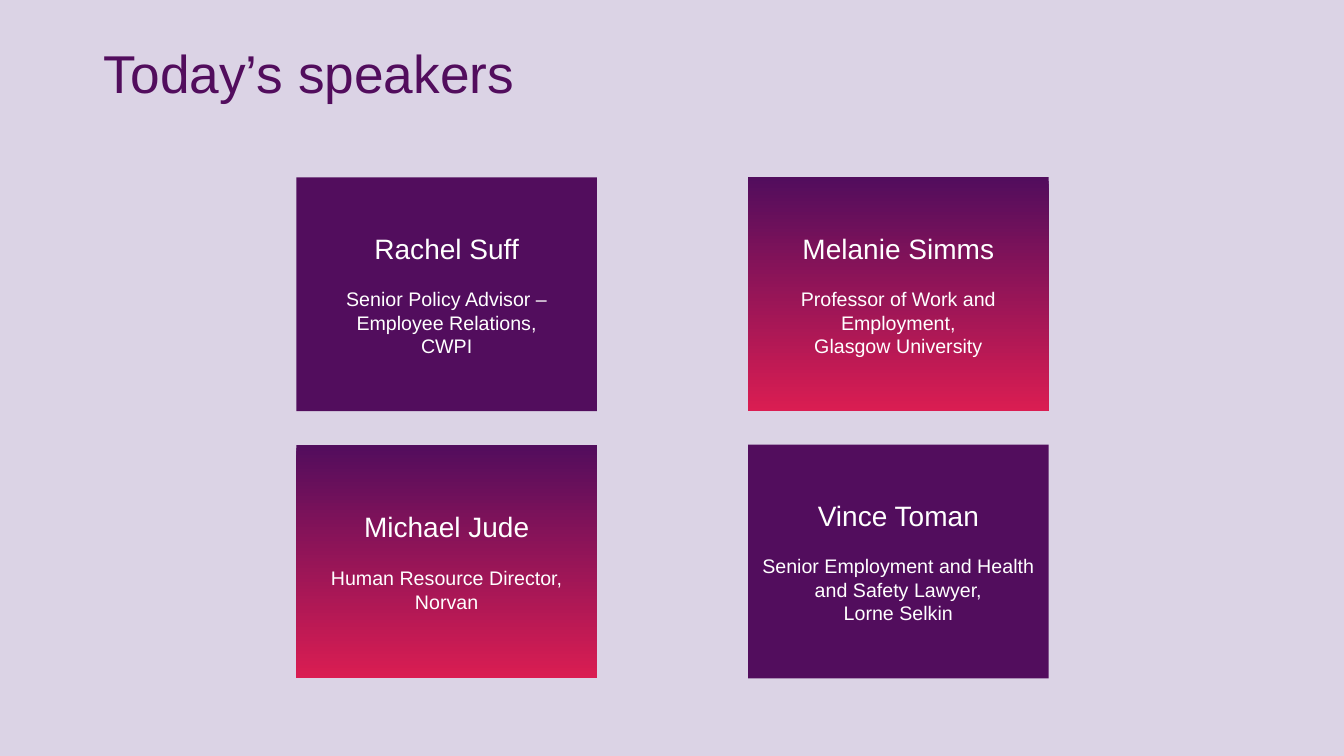
from dataclasses import dataclass
from typing import Any

from pptx import Presentation
from pptx.dml.color import RGBColor
from pptx.enum.shapes import MSO_SHAPE as Shape
from pptx.enum.text import MSO_ANCHOR as Anchor, MSO_AUTO_SIZE as AutoSize, PP_ALIGN as Align
from pptx.util import Inches, Pt

COLOURS = {"background": "DBD3E5", "purple": "520D5D", "red": "DA1D52", "white": "FFFFFF"}
FONT = "Arial"
CARD_LEFT, CARD_TOP = 2.94, 1.76
CARD_WIDTH, CARD_HEIGHT = 2.98, 2.32
COLUMN_STEP, ROW_STEP = 4.48, 2.65
COLUMNS = 2


@dataclass(frozen=True)
class Speaker:
    name: str
    role: str
    organisation: str


SPEAKERS = [
    Speaker("Rachel Suff", "Senior Policy Advisor – Employee Relations,", "CWPI"),
    Speaker("Melanie Simms", "Professor of Work and Employment,", "Glasgow University"),
    Speaker("Michael Jude", "Human Resource Director,", "Norvan"),
    Speaker("Vince Toman", "Senior Employment and Health and Safety Lawyer,", "Lorne Selkin"),
]


def colour(name: str) -> RGBColor:
    return RGBColor.from_string(COLOURS[name])


def apply_format(target: Any, values: dict[str, Any]) -> None:
    for attribute, value in values.items():
        setattr(target, attribute, value)


def write_paragraph(paragraph: Any, text: str, size: float, colour_name: str,
                    **layout: Any) -> None:
    paragraph.text = text
    apply_format(paragraph, layout)
    apply_format(paragraph.font, {"name": FONT, "size": Pt(size), "bold": False})
    paragraph.font.color.rgb = colour(colour_name)


def fill_card(shape: Any, has_gradient: bool) -> None:
    if not has_gradient:
        shape.fill.solid()
        shape.fill.fore_color.rgb = colour("purple")
        return
    shape.fill.gradient()
    shape.fill.gradient_angle = 270
    for stop, position, name in zip(shape.fill.gradient_stops, (0, 1), ("purple", "red")):
        stop.position = position
        stop.color.rgb = colour(name)


def add_card(slide: Any, speaker: Speaker, row: int, column: int) -> None:
    shape = slide.shapes.add_shape(
        Shape.RECTANGLE,
        Inches(CARD_LEFT + column * COLUMN_STEP), Inches(CARD_TOP + row * ROW_STEP),
        Inches(CARD_WIDTH), Inches(CARD_HEIGHT),
    )
    shape.shadow.inherit = False
    shape.line.fill.background()
    fill_card(shape, has_gradient=row != column)
    frame = shape.text_frame
    apply_format(frame, {"word_wrap": True, "vertical_anchor": Anchor.MIDDLE})
    write_paragraph(frame.paragraphs[0], speaker.name, 20, "white", alignment=Align.CENTER)
    write_paragraph(frame.add_paragraph(), speaker.role, 14, "white",
                    alignment=Align.CENTER, space_before=Pt(16))
    write_paragraph(frame.add_paragraph(), speaker.organisation, 14, "white",
                    alignment=Align.CENTER)


def add_title(slide: Any, text: str) -> None:
    title = slide.shapes.title
    apply_format(title, {"left": Inches(0.93), "top": Inches(0.42),
                         "width": Inches(8.62), "height": Inches(1.35)})
    apply_format(title.text_frame, {"word_wrap": True, "vertical_anchor": Anchor.TOP,
                                    "auto_size": AutoSize.NONE})
    write_paragraph(title.text_frame.paragraphs[0], text, 38, "purple",
                    alignment=Align.LEFT, line_spacing=0.9, space_before=Pt(0))


def main() -> None:
    presentation = Presentation()
    apply_format(presentation, {"slide_width": Inches(13.33), "slide_height": Inches(7.5)})
    slide = presentation.slides.add_slide(presentation.slide_layouts.get_by_name("Title Only"))
    slide.background.fill.solid()
    slide.background.fill.fore_color.rgb = colour("background")
    add_title(slide, "Today’s speakers")
    for index, speaker in enumerate(SPEAKERS):
        add_card(slide, speaker, *divmod(index, COLUMNS))
    presentation.save("out.pptx")


if __name__ == "__main__":
    main()
